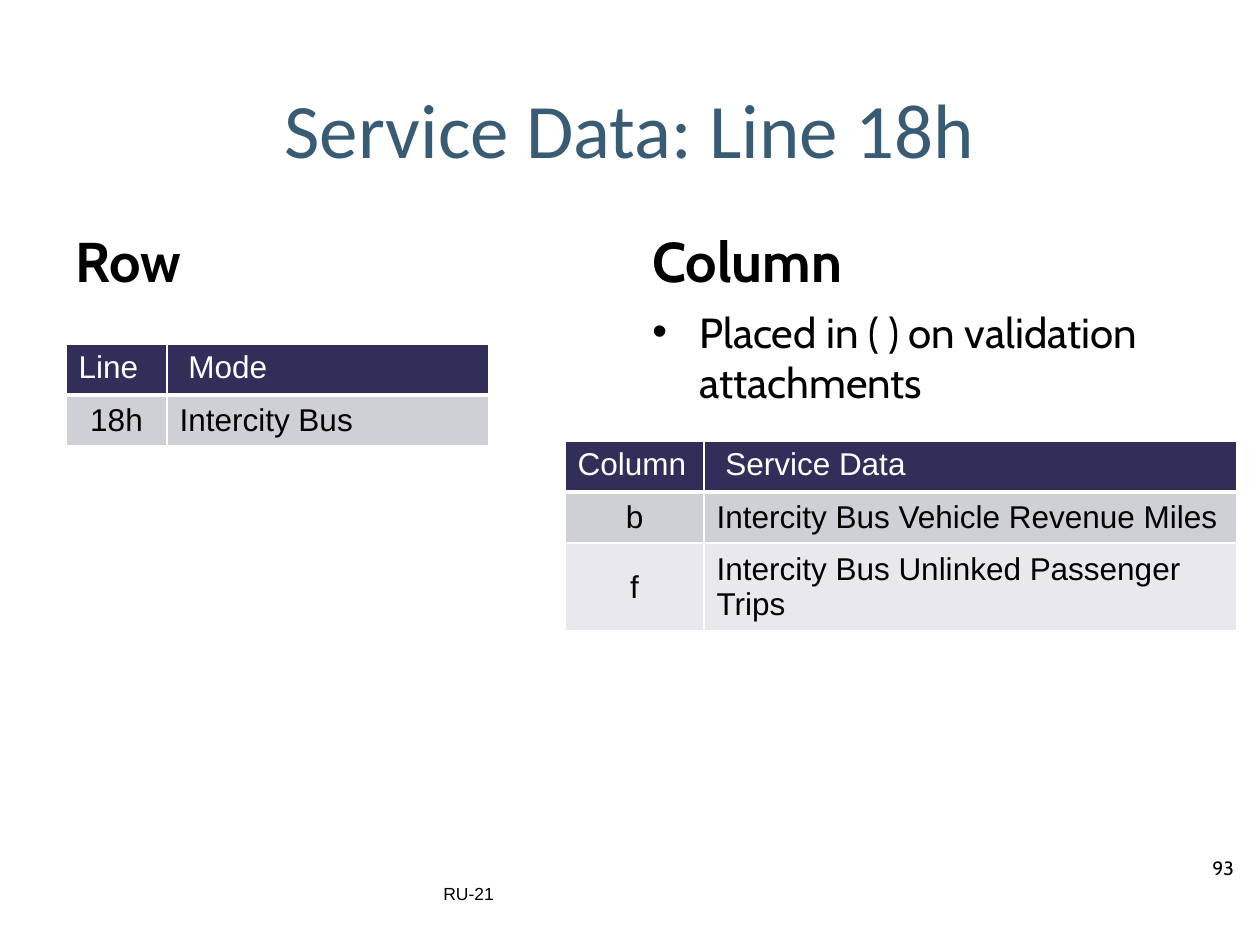
from lxml import etree
from pptx import Presentation
from pptx.dml.color import RGBColor
from pptx.enum.text import MSO_ANCHOR, PP_ALIGN
from pptx.oxml.ns import qn
from pptx.util import Pt

TOP, MIDDLE, BOTTOM = MSO_ANCHOR.TOP, MSO_ANCHOR.MIDDLE, MSO_ANCHOR.BOTTOM
LEFT, CENTER = PP_ALIGN.LEFT, PP_ALIGN.CENTER
PX = 914400 / 126
COLORS = {"title": "395B74", "text": "000000", "white": "FFFFFF",
          "header": "312F59", "band1": "CFCFD6", "band2": "E9E8EC"}


def write(tf, text, size, font, color="text", bold=False, align=LEFT):
    p = tf.paragraphs[0]
    p.alignment = align
    r = p.add_run()
    r.text = text
    r.font.size = Pt(size)
    r.font.name = font
    r.font.bold = bold
    r.font.color.rgb = RGBColor.from_string(COLORS[color])
    return p


def add_text(box, text, size, font, anchor=TOP, **style):
    tf = s.shapes.add_textbox(*[round(v * PX) for v in box]).text_frame
    tf.word_wrap = True
    tf.vertical_anchor = anchor
    return write(tf, text, size, font, **style)


prs = Presentation()
prs.slide_width, prs.slide_height = round(1260 * PX), round(945 * PX)
s = prs.slides.add_slide(prs.slide_layouts[6])

# Title and column headings
add_text((63, 60, 1134, 135), "Service Data: Line 18h", 44, "Calibri",
         anchor=MIDDLE, color="title", align=CENTER)
for x, heading in ((63, "Row"), (640, "Column")):
    add_text((x, 212, 557, 88), heading, 32, "Cabin", anchor=BOTTOM, bold=True)

# Bullet under the right heading
p = add_text((640, 300, 557, 544), "Placed in ( ) on validation attachments", 24, "Cabin")
pPr = p._p.get_or_add_pPr()
indent = round(47 * PX)
pPr.set("marL", str(indent))
pPr.set("indent", str(-indent))
etree.SubElement(pPr, qn("a:buFont"), typeface="Arial")
etree.SubElement(pPr, qn("a:buChar"), char="•")

# Tables: left, top, column widths, rows
ROW_H = 51
tables = [
    (66, 344, (101, 322), [("Line", " Mode"), ("18h", "Intercity Bus")]),
    (565, 441, (139, 533), [("Column", " Service Data"),
                            ("b", "Intercity Bus Vehicle Revenue Miles"),
                            ("f", "Intercity Bus Unlinked Passenger Trips")]),
]
fills = ("header", "band1", "band2")
for x, y, widths, rows in tables:
    box = (x, y, sum(widths), ROW_H * len(rows))
    table = s.shapes.add_table(len(rows), len(widths),
                               *[round(v * PX) for v in box]).table
    for column, width in zip(table.columns, widths):
        column.width = round(width * PX)
    for i, row in enumerate(rows):
        for j, text in enumerate(row):
            cell = table.cell(i, j)
            cell.vertical_anchor = MIDDLE if i else TOP
            write(cell.text_frame, text, 18, "Arial",
                  color="text" if i else "white",
                  align=CENTER if i and j == 0 else LEFT)
            # White borders, placed ahead of the fill
            tcPr = cell._tc.get_or_add_tcPr()
            for side in "LRTB":
                weight = 3 if side == "B" and i == 0 else 1
                ln = etree.SubElement(tcPr, qn(f"a:ln{side}"), w=str(Pt(weight)))
                line_fill = etree.SubElement(ln, qn("a:solidFill"))
                etree.SubElement(line_fill, qn("a:srgbClr"), val=COLORS["white"])
            cell.fill.solid()
            cell.fill.fore_color.rgb = RGBColor.from_string(COLORS[fills[i]])

# Footer and page number
add_text((431, 877, 399, 50), "RU-21", 10, "Arial")
add_text((1200, 850, 54, 50), "93", 11, "Cabin")

prs.save("out.pptx")
